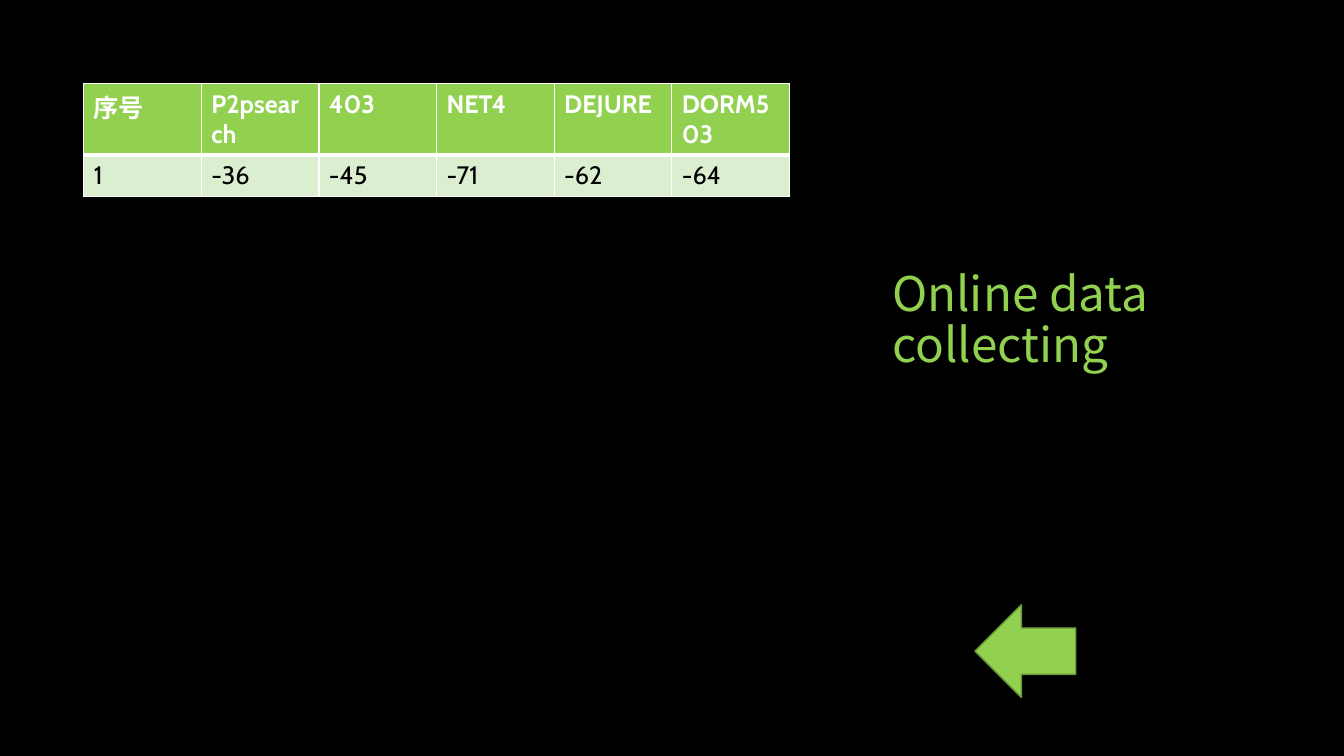
"""Build the slide on online data collecting."""
from lxml.etree import SubElement
from pptx import Presentation
from pptx.dml.color import RGBColor
from pptx.enum.shapes import MSO_SHAPE
from pptx.enum.text import MSO_ANCHOR, MSO_AUTO_SIZE, PP_ALIGN
from pptx.oxml.ns import qn
from pptx.util import Inches, Pt

GREEN, WHITE, BLACK, PALE = "92D050", "FFFFFF", "000000", "DCEED0"
SANS = "Noto Sans CJK SC"


def paint(fill, tone):
    fill.solid()
    fill.fore_color.rgb = RGBColor.from_string(tone)


def style(run, tone, form):
    for key, val in form.items():
        setattr(run.font, key, val)
    paint(run.font.fill, tone)
    SubElement(run.font._element, qn("a:ea"), typeface=SANS)


deck = Presentation()
deck.slide_width, deck.slide_height = Inches(13.33), Inches(7.5)
slide = deck.slides.add_slide(deck.slide_layouts[5])
paint(slide.background.fill, BLACK)

title = slide.shapes.title
place = {"left": 8.75, "top": 1.75, "width": 3.41, "height": 2}
for key, val in place.items():
    setattr(title, key, Inches(val))
frame = title.text_frame
frame.text = "Online data collecting"
look = {"word_wrap": True, "auto_size": MSO_AUTO_SIZE.NONE,
        "vertical_anchor": MSO_ANCHOR.BOTTOM}
for key, val in look.items():
    setattr(frame, key, val)
para = frame.paragraphs[0]
para.alignment, para.line_spacing = PP_ALIGN.LEFT, 0.9
style(para.runs[0], GREEN, {"size": Pt(34), "name": SANS, "bold": False})

rows = [
    ["序号", "P2psearch", "403", "NET4", "DEJURE", "DORM503"],
    ["1", "-36", "-45", "-71", "-62", "-64"],
]
looks = [(0.71, GREEN, WHITE, True), (0.4, PALE, BLACK, False)]
grid = slide.shapes.add_table(2, 6, Inches(0.83), Inches(0.83),
                              Inches(7), Inches(1.11)).table
for r, (row, (high, back, ink, bold)) in enumerate(zip(rows, looks)):
    grid.rows[r].height = Inches(high)
    for c, word in enumerate(row):
        cell = grid.cell(r, c)
        cell.text = word
        style(cell.text_frame.paragraphs[0].runs[0], ink,
              {"size": Pt(18), "name": "Cabin", "bold": bold})
        props = cell._tc.get_or_add_tcPr()
        for side in "LRTB":
            thick = 3 if (r, side) in ((0, "B"), (1, "T")) else 1
            edge = SubElement(props, qn(f"a:ln{side}"), w=str(Pt(thick)))
            solid = SubElement(edge, qn("a:solidFill"))
            SubElement(solid, qn("a:srgbClr"), val=WHITE)
        paint(cell.fill, back)

arrow = slide.shapes.add_shape(MSO_SHAPE.LEFT_ARROW, Inches(9.67), Inches(6),
                               Inches(1), Inches(0.92))
arrow.shadow.inherit = False
paint(arrow.fill, GREEN)
paint(arrow.line.fill, "6C9A3B")
arrow.line.width = Pt(1)

deck.save("out.pptx")
